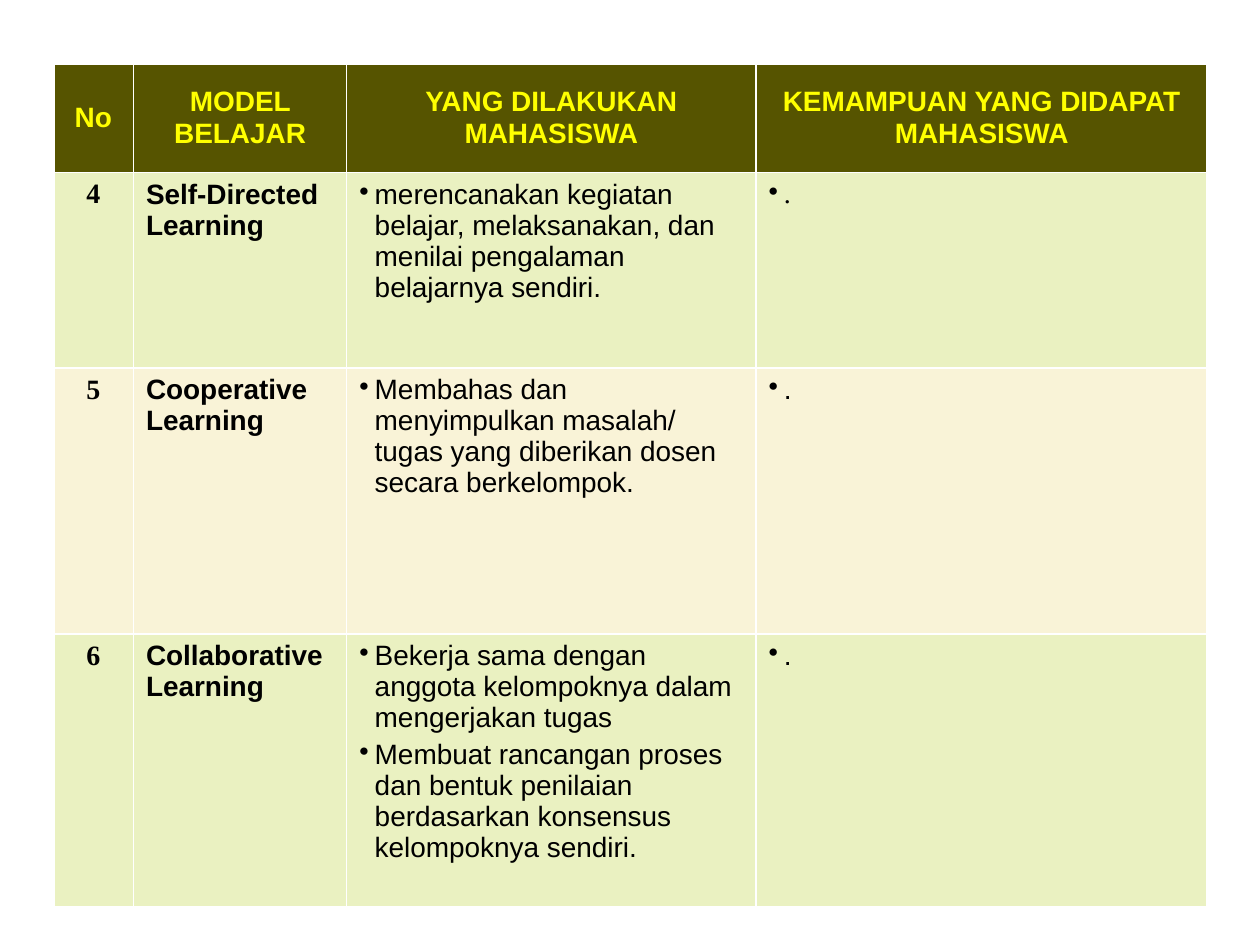
from dataclasses import dataclass

from lxml.etree import SubElement
from pptx import Presentation
from pptx.dml.color import RGBColor
from pptx.enum.text import MSO_ANCHOR as Anchor, PP_ALIGN as Align
from pptx.oxml.ns import qn
from pptx.table import _Cell as Cell
from pptx.util import Cm, Pt

COLORS = {
    "header": "565400",
    "heading": "FFFF00",
    "green": "EAF1C1",
    "cream": "F9F3D7",
    "text": "000000",
    "border": "FFFFFF",
}
SANS, SERIF = "Arial", "Times New Roman"
COLUMN_WIDTHS = (1.62, 4.3, 8.25, 9.1)
ROW_HEIGHTS = (2.21, 3.94, 5.36, 5.51)
HEADINGS = ("No", "MODEL BELAJAR", "YANG DILAKUKAN MAHASISWA", "KEMAMPUAN YANG DIDAPAT MAHASISWA")


@dataclass
class CellStyle:
    font: str = SANS
    color: str = "text"
    bold: bool = False
    align: Align = Align.LEFT
    anchor: Anchor = Anchor.TOP
    bullet: bool = False


@dataclass
class LearningModel:
    number: str
    name: str
    activities: tuple[str, ...]
    fill: str
    skill_font: str = SANS


HEADING = CellStyle(color="heading", bold=True, align=Align.CENTER, anchor=Anchor.MIDDLE)
NUMBER = CellStyle(font=SERIF, bold=True, align=Align.CENTER)
NAME = CellStyle(bold=True)
ACTIVITY = CellStyle(bullet=True)

MODELS = (
    LearningModel(
        "4",
        "Self-Directed Learning",
        ("merencanakan kegiatan belajar, melaksanakan, dan menilai pengalaman belajarnya sendiri.",),
        "green",
        SERIF,
    ),
    LearningModel(
        "5",
        "Cooperative Learning",
        ("Membahas dan menyimpulkan masalah/ tugas yang diberikan dosen secara berkelompok.",),
        "cream",
    ),
    LearningModel(
        "6",
        "Collaborative Learning",
        (
            "Bekerja sama dengan anggota kelompoknya dalam mengerjakan tugas",
            "Membuat rancangan proses dan bentuk penilaian berdasarkan konsensus kelompoknya sendiri.",
        ),
        "green",
    ),
)


def set_borders(cell: Cell, outer_sides: dict[str, bool]) -> None:
    """Draw the four cell borders, thicker on the outer edges of the table."""
    properties = cell._tc.get_or_add_tcPr()
    for side, is_outer in outer_sides.items():
        width = Pt(2.25 if is_outer else 1)
        line = SubElement(properties, qn(f"a:ln{side}"), w=str(width))
        fill = SubElement(line, qn("a:solidFill"))
        SubElement(fill, qn("a:srgbClr"), val=COLORS["border"])


def write_cell(cell: Cell, lines: tuple[str, ...], style: CellStyle, fill: str) -> None:
    """Fill one cell and write its paragraphs in the given style."""
    cell.fill.solid()
    cell.fill.fore_color.rgb = RGBColor.from_string(COLORS[fill])
    cell.vertical_anchor = style.anchor
    cell.text_frame.text = "\n".join(lines)
    for index, paragraph in enumerate(cell.text_frame.paragraphs):
        paragraph.alignment = style.align
        if index:
            paragraph.space_before = Pt(3.2)
        if style.bullet:
            properties = paragraph._p.get_or_add_pPr()
            properties.set("marL", str(Cm(0.31)))
            properties.set("indent", str(-Cm(0.31)))
            SubElement(properties, qn("a:buChar"), char="•")
        for run in paragraph.runs:
            run.font.name = style.font
            run.font.size = Pt(16)
            run.font.bold = style.bold
            run.font.color.rgb = RGBColor.from_string(COLORS[style.color])


def main() -> None:
    """Build the slide with the table of learning models."""
    presentation = Presentation()
    presentation.slide_width, presentation.slide_height = Cm(25.4), Cm(19.05)
    slide = presentation.slides.add_slide(presentation.slide_layouts[6])
    row_count, column_count = len(ROW_HEIGHTS), len(COLUMN_WIDTHS)
    table = slide.shapes.add_table(
        row_count, column_count, Cm(1.07), Cm(1.27), Cm(sum(COLUMN_WIDTHS)), Cm(sum(ROW_HEIGHTS))
    ).table
    table.first_row = table.horz_banding = False
    for column, width in zip(table.columns, COLUMN_WIDTHS):
        column.width = Cm(width)
    for row, height in zip(table.rows, ROW_HEIGHTS):
        row.height = Cm(height)

    for row_index in range(row_count):
        for column_index in range(column_count):
            outer_sides = {
                "L": column_index == 0,
                "R": column_index == column_count - 1,
                "T": row_index == 0,
                "B": row_index == row_count - 1,
            }
            set_borders(table.cell(row_index, column_index), outer_sides)

    for column_index, heading in enumerate(HEADINGS):
        write_cell(table.cell(0, column_index), (heading,), HEADING, "header")
    for row_index, model in enumerate(MODELS, start=1):
        contents = (
            ((model.number,), NUMBER),
            ((model.name,), NAME),
            (model.activities, ACTIVITY),
            ((".",), CellStyle(font=model.skill_font, bullet=True)),
        )
        for column_index, (lines, style) in enumerate(contents):
            write_cell(table.cell(row_index, column_index), lines, style, model.fill)

    presentation.save("out.pptx")


if __name__ == "__main__":
    main()
